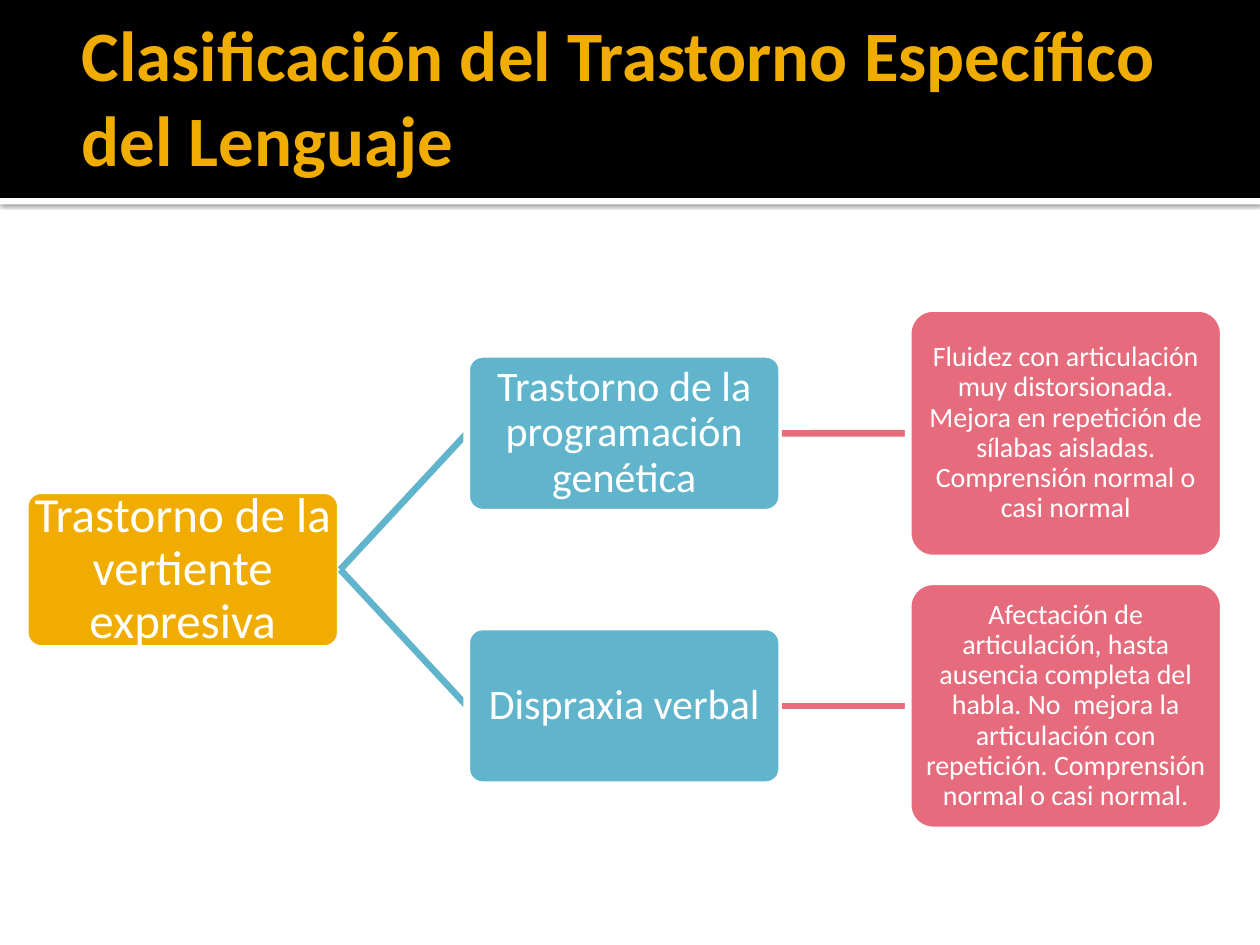
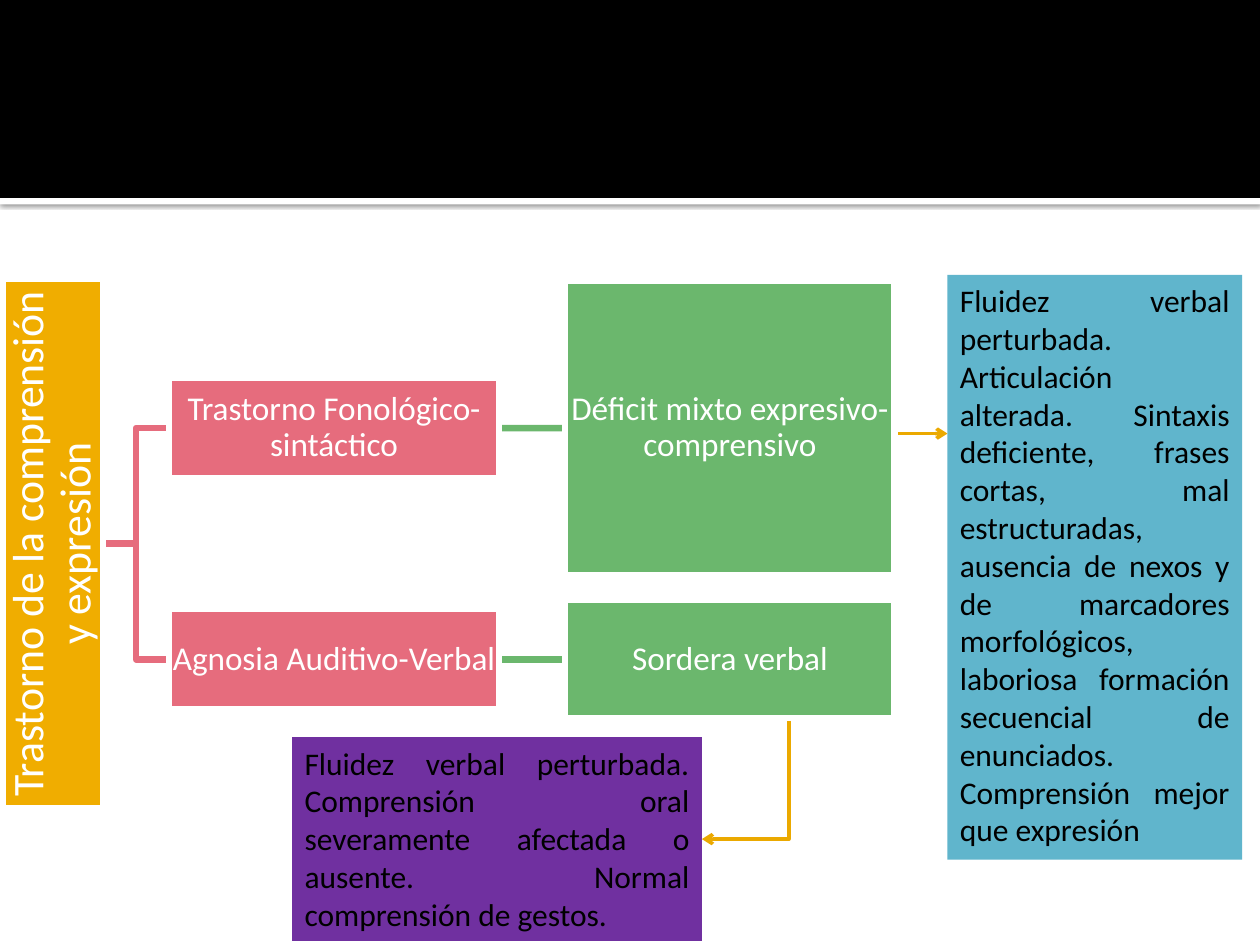
from dataclasses import dataclass

from lxml import etree
from pptx import Presentation
from pptx.dml.color import RGBColor
from pptx.enum.shapes import MSO_CONNECTOR, MSO_SHAPE
from pptx.enum.text import MSO_ANCHOR, PP_ALIGN
from pptx.oxml.ns import qn
from pptx.util import Cm, Pt

RECTANGLE, ROUNDED = MSO_SHAPE.RECTANGLE, MSO_SHAPE.ROUNDED_RECTANGLE
STRAIGHT, ELBOW = MSO_CONNECTOR.STRAIGHT, MSO_CONNECTOR.ELBOW
MIDDLE, TOP = MSO_ANCHOR.MIDDLE, MSO_ANCHOR.TOP
LEFT, CENTER, JUSTIFY = PP_ALIGN.LEFT, PP_ALIGN.CENTER, PP_ALIGN.JUSTIFY
LEFT_SIDE, RIGHT_SIDE = 1, 3


@dataclass(frozen=True)
class Theme:
    """Colours, font and sizes shared by the deck."""
    font: str = "Calibri"
    black: str = "000000"
    white: str = "FFFFFF"
    gold: str = "F0AD00"
    arrow: str = "EBA900"
    blue: str = "60B5CC"
    pink: str = "E66C7D"
    green: str = "6BB76D"
    purple: str = "7030A0"
    title_size: float = 40.5
    note_size: float = 18
    outline: float = 3.78
    arrow_width: float = 2


@dataclass(frozen=True)
class Box:
    """A rectangle in centimetres."""
    left: float
    top: float
    width: float
    height: float

    def lengths(self):
        """Return the four lengths for python-pptx."""
        return Cm(self.left), Cm(self.top), Cm(self.width), Cm(self.height)


@dataclass(frozen=True)
class Level:
    """The look of one column of a tree."""
    width: float
    color: str
    size: float
    margin: float


@dataclass(frozen=True)
class TreeStyle:
    """The outline and joints of a tree."""
    outline: MSO_SHAPE
    root_link: MSO_CONNECTOR
    links_behind_parent: bool
    gap: float
    leaf_gap: float
    child_height: float
    root_height: float
    root_vertical: bool


THEME = Theme()
PAGE = Box(0, 0, 25.4, 19.05)
BAND = Box(0, 0, 25.4, 3.99)


def add_effects(shape):
    """Give a shape or connector its own empty effect list."""
    return etree.SubElement(shape._element.spPr, qn("a:effectLst"))


def write(shape, text, size, color, align, anchor, margin, bold=False):
    """Fill a shape with one paragraph."""
    frame = shape.text_frame
    frame.word_wrap = True
    frame.vertical_anchor = anchor
    horizontal, vertical = margin
    frame.margin_left = frame.margin_right = Cm(horizontal)
    frame.margin_top = frame.margin_bottom = Cm(vertical)
    para = frame.paragraphs[0]
    para.text = text
    para.alignment = align
    para.font.name = THEME.font
    para.font.size = Pt(size)
    para.font.bold = bold
    para.font.color.rgb = RGBColor.from_string(color)
    return para


def add_block(page, box, color, outline=RECTANGLE):
    """Draw a plain filled shape."""
    block = page.shapes.add_shape(outline, *box.lengths())
    block.shadow.inherit = False
    block.fill.solid()
    block.fill.fore_color.rgb = RGBColor.from_string(color)
    block.line.fill.background()
    return block


def add_line(page, kind, start, end, color, width):
    """Draw a connector between two points in centimetres."""
    line = page.shapes.add_connector(kind, *map(Cm, (*start, *end)))
    line.line.color.rgb = RGBColor.from_string(color)
    line.line.width = Pt(width)
    add_effects(line)
    return line


def add_arrow(page, kind, start, end):
    """Draw a connector with an open arrowhead at its end."""
    arrow = add_line(page, kind, start, end, THEME.arrow, THEME.arrow_width)
    etree.SubElement(arrow.line._get_or_add_ln(), qn("a:tailEnd"), type="arrow")
    return arrow


def add_corner_arrow(page, start, end):
    """Draw an arrow that goes down from start, then left to end."""
    across, down = start[0] - end[0], end[1] - start[1]
    middle_x, middle_y = (start[0] + end[0]) / 2, (start[1] + end[1]) / 2
    arrow = add_arrow(page, ELBOW, (middle_x - down / 2, middle_y - across / 2),
                      (middle_x + down / 2, middle_y + across / 2))
    properties = arrow._element.spPr
    properties.find(qn("a:xfrm")).set("rot", "5400000")
    properties.find(qn("a:prstGeom")).set("prst", "bentConnector2")


def add_header(page, box, title=""):
    """Draw the black band, the shadowed strip under it and the title."""
    strip = add_block(page, Box(box.left, box.top + box.height, box.width, 0.13), THEME.white)
    effects = strip._element.spPr.find(qn("a:effectLst"))
    shadow = etree.SubElement(effects, qn("a:outerShdw"), blurRad=str(Pt(2.5)),
                              dist=str(Pt(0.8)), dir="5400000", rotWithShape="0")
    shade = etree.SubElement(shadow, qn("a:srgbClr"), val=THEME.black)
    etree.SubElement(shade, qn("a:alpha"), val="60000")
    add_block(page, box, THEME.black)
    if title:
        area = Box(box.left + 1.4, box.top + 0.33, box.width - 2.54, 3.18)
        heading = page.shapes.add_textbox(*area.lengths())
        write(heading, title, THEME.title_size, THEME.gold, LEFT, MIDDLE, (0.25, 0.13), True)


def add_node(page, box, level, outline, text):
    """Draw one labelled, white-edged box of a tree."""
    node = add_block(page, box, level.color, outline)
    if outline == ROUNDED:
        node.adjustments[0] = 0.1
    node.line.color.rgb = RGBColor.from_string(THEME.white)
    node.line.width = Pt(THEME.outline)
    para = write(node, text, level.size, THEME.white, CENTER, MIDDLE, (level.margin,) * 2)
    para.line_spacing = 0.9
    return node


def add_link(page, kind, parent, child, color, behind_parent):
    """Join the right side of the parent to the left side of the child."""
    link = add_line(page, kind, (0, 0), (0, 0), color, THEME.outline)
    link.begin_connect(parent, RIGHT_SIDE)
    link.end_connect(child, LEFT_SIDE)
    front = parent if behind_parent else child
    front._element.addprevious(link._element)


def add_tree(page, left, top, style, levels, root_text, branches):
    """Draw a root and its branches, each a child, a leaf and the leaf's height."""
    root_level, child_level, leaf_level = levels
    child_left = left + root_level.width + style.gap
    leaf_left = child_left + child_level.width + style.gap
    middles, leaf_top = [], top
    for _, _, height in branches:
        middles.append(leaf_top + height / 2)
        leaf_top += height + style.leaf_gap

    def place(level, x, middle, height, text):
        box = Box(x, middle - height / 2, level.width, height)
        return add_node(page, box, level, style.outline, text)

    root = place(root_level, left, sum(middles) / len(middles), style.root_height, root_text)
    if style.root_vertical:
        root.text_frame._txBody.bodyPr.set("vert", "vert270")
    for middle, (child_text, leaf_text, height) in zip(middles, branches):
        child = place(child_level, child_left, middle, style.child_height, child_text)
        add_link(page, style.root_link, root, child, child_level.color,
                 style.links_behind_parent)
        leaf = place(leaf_level, leaf_left, middle, height, leaf_text)
        add_link(page, STRAIGHT, child, leaf, leaf_level.color, style.links_behind_parent)


def add_note(page, box, color, text):
    """Draw a coloured note with justified text."""
    note = add_block(page, box, color)
    write(note, text, THEME.note_size, THEME.black, JUSTIFY, TOP, (0.25, 0.13))


def build_expressive(page, box):
    """Build the slide on expressive disorders."""
    add_header(page, BAND, "Clasificación del Trastorno Específico del Lenguaje")
    style = TreeStyle(ROUNDED, STRAIGHT, False, gap=2.55, leaf_gap=0.48,
                      child_height=3.18, root_height=3.18, root_vertical=False)
    levels = (Level(6.35, THEME.gold, 28, 0.05), Level(6.35, THEME.blue, 24, 0.05),
              Level(6.35, THEME.pink, 16, 0.03))
    add_tree(page, box.left + 0.51, box.top + 6.22, style, levels,
             "Trastorno de la vertiente expresiva", [
                 ("Trastorno de la programación genética",
                  "Fluidez con articulación muy distorsionada. Mejora en repetición de "
                  "sílabas aisladas. Comprensión normal o casi normal", 5.03),
                 ("Dispraxia verbal",
                  "Afectación de articulación, hasta ausencia completa del habla. "
                  "No  mejora la articulación con repetición. Comprensión normal o "
                  "casi normal.", 5),
             ])


def build_comprehension(page, box):
    """Build the slide on comprehension and expression disorders."""
    add_header(page, BAND)
    style = TreeStyle(RECTANGLE, ELBOW, True, gap=1.33, leaf_gap=0.5,
                      child_height=2.03, root_height=10.67, root_vertical=True)
    levels = (Level(2.03, THEME.gold, 25, 0.05), Level(6.65, THEME.pink, 19, 0.02),
              Level(6.65, THEME.green, 19, 0.02))
    add_tree(page, box.left + 0.05, box.top + 5.66, style, levels,
             "Trastorno de la comprensión y expresión", [
                 ("Trastorno Fonológico-sintáctico",
                  "Déficit mixto expresivo-comprensivo", 5.94),
                 ("Agnosia Auditivo-Verbal", "Sordera verbal", 2.39),
             ])
    mixed = Box(box.left + 19.1, box.top + 5.54, 5.94, 11.79)
    deafness = Box(box.left + 5.89, box.top + 14.86, 8.26, 4.11)
    add_note(page, mixed, THEME.blue,
             "Fluidez verbal perturbada. Articulación alterada. Sintaxis deficiente, "
             "frases cortas, mal estructuradas, ausencia de nexos y de marcadores "
             "morfológicos, laboriosa formación secuencial de enunciados. "
             "Comprensión mejor que expresión")
    add_note(page, deafness, THEME.purple,
             "Fluidez verbal perturbada. Comprensión oral severamente afectada o "
             "ausente. Normal comprensión de gestos.")
    arrow_y = box.top + 8.74
    add_arrow(page, STRAIGHT, (mixed.left - 0.99, arrow_y), (mixed.left, arrow_y))
    right = deafness.left + deafness.width
    add_corner_arrow(page, (right + 1.75, deafness.top - 0.33),
                     (right, deafness.top + deafness.height / 2))


def main():
    """Build and save the deck."""
    deck = Presentation()
    deck.slide_width, deck.slide_height = Cm(PAGE.width), Cm(PAGE.height)
    blank = deck.slide_layouts[6]
    for build in (build_expressive, build_comprehension):
        build(deck.slides.add_slide(blank), PAGE)
    deck.save("out.pptx")


if __name__ == "__main__":
    main()
